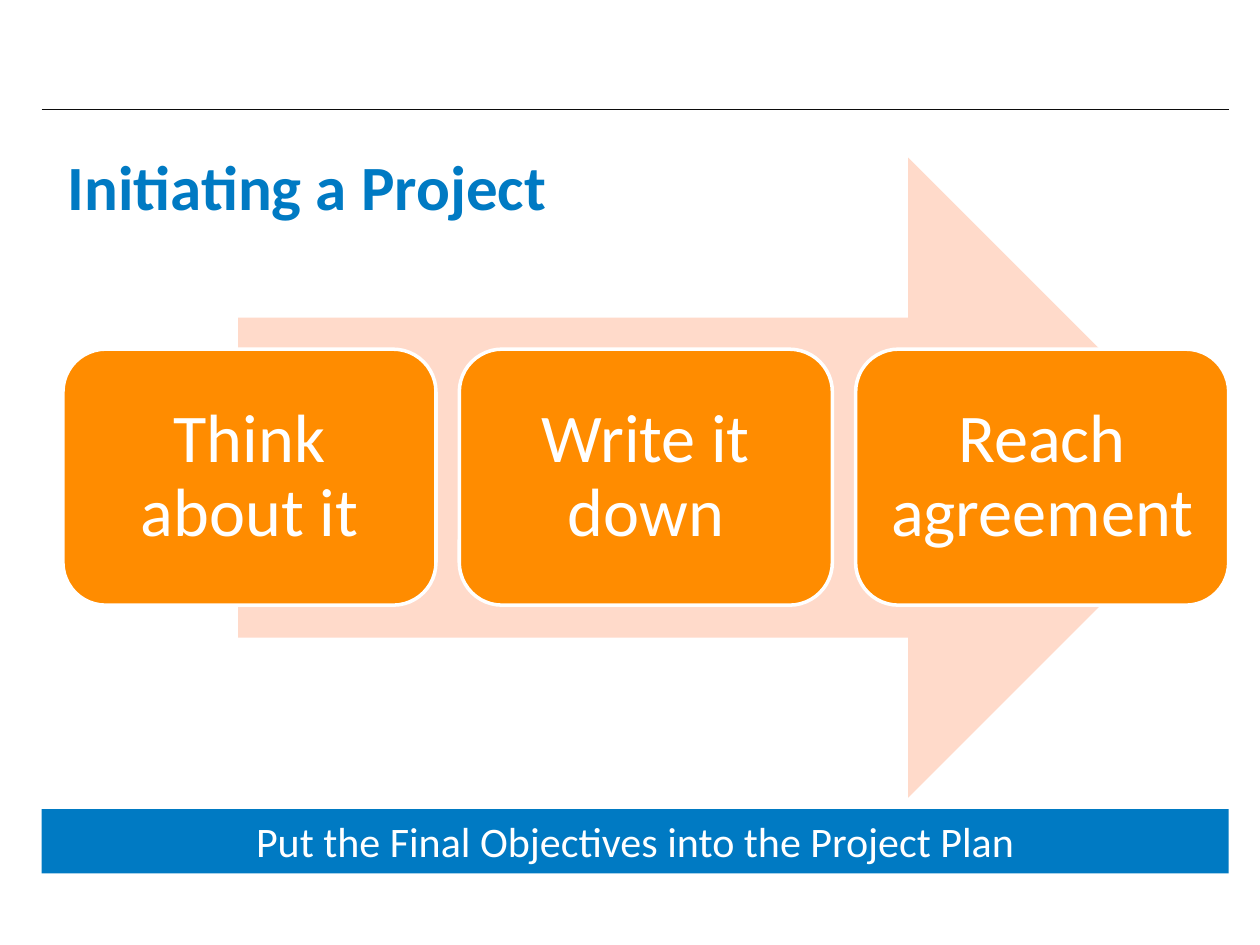
from lxml import etree
from pptx import Presentation
from pptx.dml.color import RGBColor
from pptx.enum.shapes import MSO_CONNECTOR, MSO_SHAPE
from pptx.enum.text import MSO_ANCHOR, PP_ALIGN
from pptx.oxml.ns import qn
from pptx.util import Cm, Pt

ARROW = MSO_SHAPE.RIGHT_ARROW
ROUNDED = MSO_SHAPE.ROUNDED_RECTANGLE
RECTANGLE = MSO_SHAPE.RECTANGLE
STRAIGHT = MSO_CONNECTOR.STRAIGHT
CENTER, LEFT = PP_ALIGN.CENTER, PP_ALIGN.LEFT
MIDDLE, TOP = MSO_ANCHOR.MIDDLE, MSO_ANCHOR.TOP

FONT = "Calibri"
COLORS = {
    "rule": "0C0C0C",
    "arrow": "FFDACA",
    "step": "FF8C00",
    "blue": "007AC3",
    "white": "FFFFFF",
}

STEPS = ["Think about it", "Write it down", "Reach agreement"]
STEP_LEFT, STEP_PITCH = 1.27, 7.99
MARGIN_LEFT, MARGIN_RIGHT = 0.84, 24.77


def color(name):
    return RGBColor.from_string(COLORS[name])


def add_block(slide, kind, box, fill, outline=None):
    block = slide.shapes.add_shape(kind, *map(Cm, box))
    block.shadow.inherit = False
    block.fill.solid()
    block.fill.fore_color.rgb = color(fill)
    if outline:
        block.line.color.rgb = color(outline)
        block.line.width = Pt(2)
    else:
        block.line.fill.background()
    return block


def write(shape, text, size, text_color, align=CENTER, anchor=MIDDLE,
          bold=False, inset=(0.25, 0.13), spacing=None):
    frame = shape.text_frame
    frame.word_wrap = True
    frame.vertical_anchor = anchor
    frame.margin_left = frame.margin_right = Cm(inset[0])
    frame.margin_top = frame.margin_bottom = Cm(inset[1])
    paragraph = frame.paragraphs[0]
    paragraph.text = text
    paragraph.alignment = align
    paragraph.line_spacing = spacing
    font = paragraph.font
    font.name, font.size, font.bold = FONT, Pt(size), bold
    font.color.rgb = color(text_color)


def add_rule(slide, y):
    rule = slide.shapes.add_connector(
        STRAIGHT, Cm(MARGIN_LEFT), Cm(y), Cm(MARGIN_RIGHT), Cm(y))
    rule.line.color.rgb = color("rule")
    rule.line.width = Pt(0.75)
    etree.SubElement(rule._element.spPr, qn("a:effectLst"))


def add_step(slide, index, label):
    left = STEP_LEFT + index * STEP_PITCH
    step = add_block(slide, ROUNDED, (left, 7.04, 7.52, 5.16), "step", "white")
    step.adjustments[0] = 0.167
    write(step, label, 39, "white", inset=(0.41, 0.41), spacing=0.9)


def main():
    prs = Presentation()
    prs.slide_width, prs.slide_height = Cm(25.4), Cm(19.05)
    slide = prs.slides.add_slide(prs.slide_layouts[6])

    # Header rule
    add_rule(slide, 2.21)

    # Process arrow with its steps
    add_block(slide, ARROW, (4.8, 3.18, 19.96, 12.9), "arrow")
    for index, label in enumerate(STEPS):
        add_step(slide, index, label)

    # Closing banner
    banner = add_block(
        slide, RECTANGLE,
        (MARGIN_LEFT, 16.31, MARGIN_RIGHT - MARGIN_LEFT, 1.3), "blue")
    write(banner, "Put the Final Objectives into the Project Plan", 24,
          "white", anchor=TOP)

    # Title
    title = slide.shapes.add_textbox(Cm(1.12), Cm(2.79), Cm(16.23), Cm(1.9))
    write(title, "Initiating a Project", 36, "blue", align=LEFT, bold=True)

    prs.save("out.pptx")


if __name__ == "__main__":
    main()
